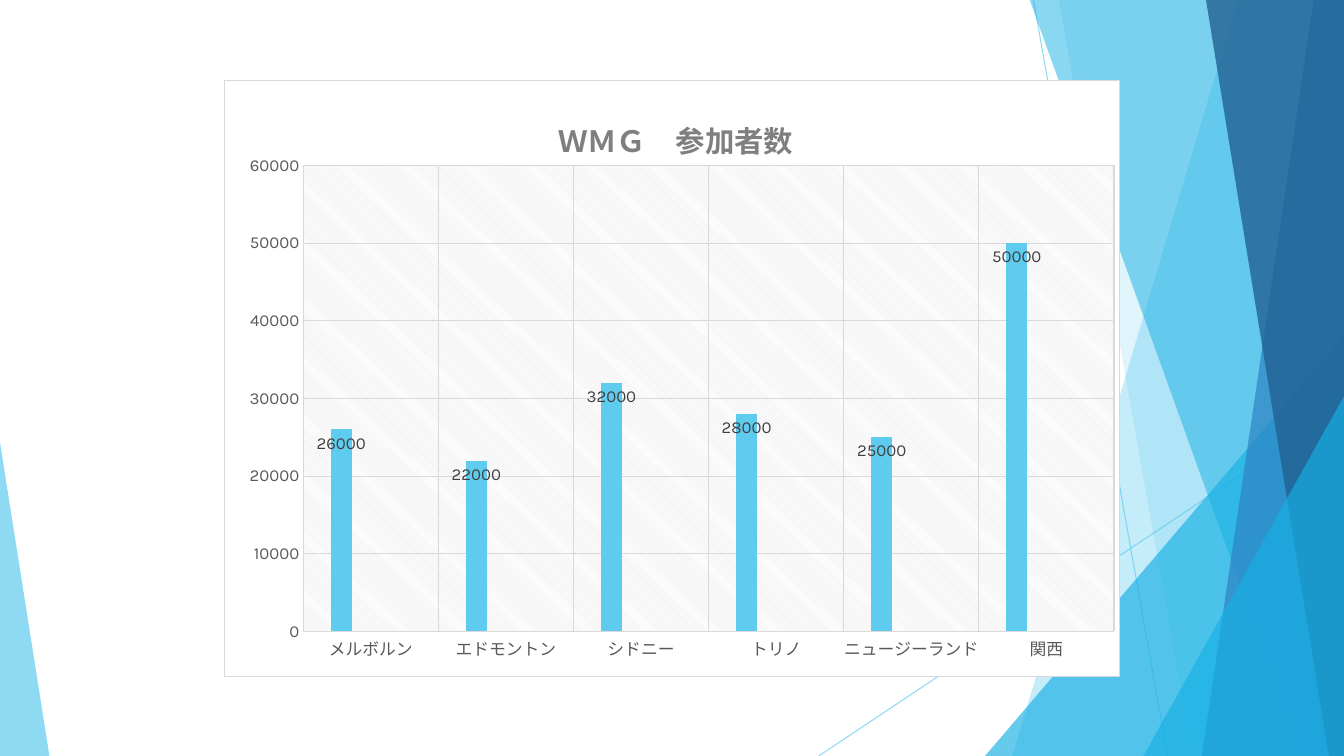
"""Build a slide with a column chart of games participants over a faceted blue backdrop."""
from lxml import etree
from pptx import Presentation
from pptx.chart.data import CategoryChartData
from pptx.dml.color import RGBColor
from pptx.enum.chart import XL_CHART_TYPE, XL_LABEL_POSITION, XL_TICK_MARK
from pptx.enum.shapes import MSO_CONNECTOR, MSO_SHAPE
from pptx.oxml import parse_xml
from pptx.oxml.ns import qn
from pptx.util import Inches, Pt

COLUMN = XL_CHART_TYPE.COLUMN_CLUSTERED
INSIDE_END = XL_LABEL_POSITION.INSIDE_END
NO_TICK = XL_TICK_MARK.NONE
STRAIGHT = MSO_CONNECTOR.STRAIGHT
TRIANGLE = MSO_SHAPE.ISOSCELES_TRIANGLE

W, H, TOP = 13.33, 7.5, -0.01
FONT = "Karla"
COLORS = {
    "sky": "5FCBEF", "cyan": "17B0E4", "blue": "2E83C3", "navy": "226292",
    "mint": "42D0A2", "white": "FFFFFF", "grid": "D9D9D9",
    "title": "7F7F7F", "axis": "595959", "label": "404040",
}

TITLE = "ＷＭＧ　参加者数"
PARTICIPANTS = {
    "メルボルン": 26000, "エドモントン": 22000, "シドニー": 32000,
    "トリノ": 28000, "ニュージーランド": 25000, "関西": 50000,
}
SERIES = [
    ("Series 1", list(PARTICIPANTS.values()), "sky"),
    ("Series 2", [None] * len(PARTICIPANTS), "blue"),
    ("Series 3", [None] * len(PARTICIPANTS), "mint"),
]
CHART_BOX = (W / 6, 0.79, W * 2 / 3, 5.93)
PLOT_SHARES = {"x": 0.088, "y": 0.143, "w": 0.906, "h": 0.781}
TITLE_SHARES = {"x": 0.367, "y": 0.05}

RAYS = [(10.25, 0, 11.58, H), (W, 4.03, 8.12, H)]
BANDS_BEHIND = [(12.28, 10.04, "sky", 36), (10.5, 11.83, "sky", 20)]
BANDS_FRONT = [(10.21, 12.91, "cyan", 50), (13.03, 11.92, "blue", 70),
               (11.96, 13.18, "navy", 80)]
WIDE_CORNER = (9.77, 3.33, W - 9.77, 1, "cyan", 66)
SLIM_CORNER = (11.34, 3.93, W - 11.34, 1, "cyan", 66)
LEFT_CORNER = (0, 4.39, 0.49, 0, "sky", 70)


def rgb(name):
    return RGBColor.from_string(COLORS[name])


def set_alpha(shape, percent):
    clr = next(shape._element.spPr.iter(qn("a:srgbClr")))
    etree.SubElement(clr, qn("a:alpha")).set("val", str(percent * 1000))


def paint(shape, color, alpha):
    shape.shadow.inherit = False
    shape.fill.solid()
    shape.fill.fore_color.rgb = rgb(color)
    set_alpha(shape, alpha)
    shape.line.fill.background()


def add_ray(s, x1, y1, x2, y2):
    ray = s.shapes.add_connector(STRAIGHT, *map(Inches, (x1, y1, x2, y2)))
    ray.line.color.rgb = rgb("sky")
    ray.line.width = Pt(0.75)
    set_alpha(ray, 70)
    etree.SubElement(ray._element.spPr, qn("a:effectLst"))


def add_band(s, top_x, bottom_x, color, alpha):
    corners = [(W, TOP), (W, H), (bottom_x, H)]
    builder = s.shapes.build_freeform(Inches(top_x), Inches(TOP))
    builder.add_line_segments([(Inches(x), Inches(y)) for x, y in corners])
    paint(builder.convert_to_shape(), color, alpha)


def add_corner(s, x, y, width, apex, color, alpha):
    corner = s.shapes.add_shape(TRIANGLE, *map(Inches, (x, y, width, H - y)))
    corner.adjustments[0] = apex
    paint(corner, color, alpha)


def chart_xml(tag, body):
    return parse_xml(
        f'<c:{tag} xmlns:c="http://schemas.openxmlformats.org/drawingml/2006/chart" '
        f'xmlns:a="http://schemas.openxmlformats.org/drawingml/2006/main">{body}</c:{tag}>')


def solid(name):
    return f'<a:solidFill><a:srgbClr val="{COLORS[name]}"/></a:solidFill>'


def set_layout(parent, index, shares, target=""):
    for old in parent.findall(qn("c:layout")):
        parent.remove(old)
    modes = "".join(f'<c:{k}Mode val="edge"/>' for k in "xy")
    sizes = "".join(f'<c:{k} val="{v}"/>' for k, v in shares.items())
    body = f"<c:manualLayout>{target}{modes}{sizes}</c:manualLayout>"
    parent.insert(index, chart_xml("layout", body))


def set_font(font, size, color):
    font.name = FONT
    font.size = Pt(size)
    font.color.rgb = rgb(color)


def style_axis(axis):
    axis.major_tick_mark = axis.minor_tick_mark = NO_TICK
    axis.has_major_gridlines = True
    for line in (axis.major_gridlines.format.line, axis.format.line):
        line.color.rgb = rgb("grid")
        line.width = Pt(0.75)
    set_font(axis.tick_labels.font, 12, "axis")


def add_participants_chart(s):
    data = CategoryChartData()
    data.categories = list(PARTICIPANTS)
    for name, values, _ in SERIES:
        data.add_series(name, values)
    chart = s.shapes.add_chart(COLUMN, *map(Inches, CHART_BOX), data).chart
    chart.has_legend = False
    set_font(chart.font, 10, "label")

    chart.has_title = True
    r = chart.chart_title.text_frame.paragraphs[0].add_run()
    r.text = TITLE
    set_font(r.font, 21, "title")
    r.font.bold = True
    chart.chart_title.include_in_layout = False

    style_axis(chart.category_axis)
    style_axis(chart.value_axis)
    chart.value_axis.format.line.fill.background()
    chart.value_axis.minimum_scale = 0
    chart.value_axis.maximum_scale = 60000
    chart.value_axis.major_unit = 10000

    plot = chart.plots[0]
    plot.gap_width = 267
    plot.overlap = -43
    plot.vary_by_categories = False
    for series, (_, _, color) in zip(plot.series, SERIES):
        series.format.fill.solid()
        series.format.fill.fore_color.rgb = rgb(color)
        labels = series.data_labels
        labels.show_value = True
        labels.position = INSIDE_END
        set_font(labels.font, 12, "label")

    area = chart.element.chart.plotArea
    set_layout(area, 0, PLOT_SHARES, '<c:layoutTarget val="inner"/>')
    set_layout(chart.chart_title._element, 1, TITLE_SHARES)
    area.append(chart_xml("spPr", (
        '<a:pattFill prst="ltDnDiag">'
        f'<a:fgClr><a:srgbClr val="{COLORS["grid"]}"/></a:fgClr>'
        f'<a:bgClr><a:srgbClr val="{COLORS["white"]}"/></a:bgClr>'
        '</a:pattFill><a:ln><a:noFill/></a:ln>')))
    frame = f'{solid("white")}<a:ln w="{Pt(0.75)}">{solid("grid")}</a:ln>'
    chart.element.chart.addnext(chart_xml("spPr", frame))


def main():
    prs = Presentation()
    prs.slide_width, prs.slide_height = Inches(W), Inches(H)
    s = prs.slides.add_slide(prs.slide_layouts[6])
    for ray in RAYS:
        add_ray(s, *ray)
    for band in BANDS_BEHIND:
        add_band(s, *band)
    add_corner(s, *WIDE_CORNER)
    for band in BANDS_FRONT:
        add_band(s, *band)
    add_corner(s, *SLIM_CORNER)
    add_corner(s, *LEFT_CORNER)
    add_participants_chart(s)
    prs.save("out.pptx")


if __name__ == "__main__":
    main()
